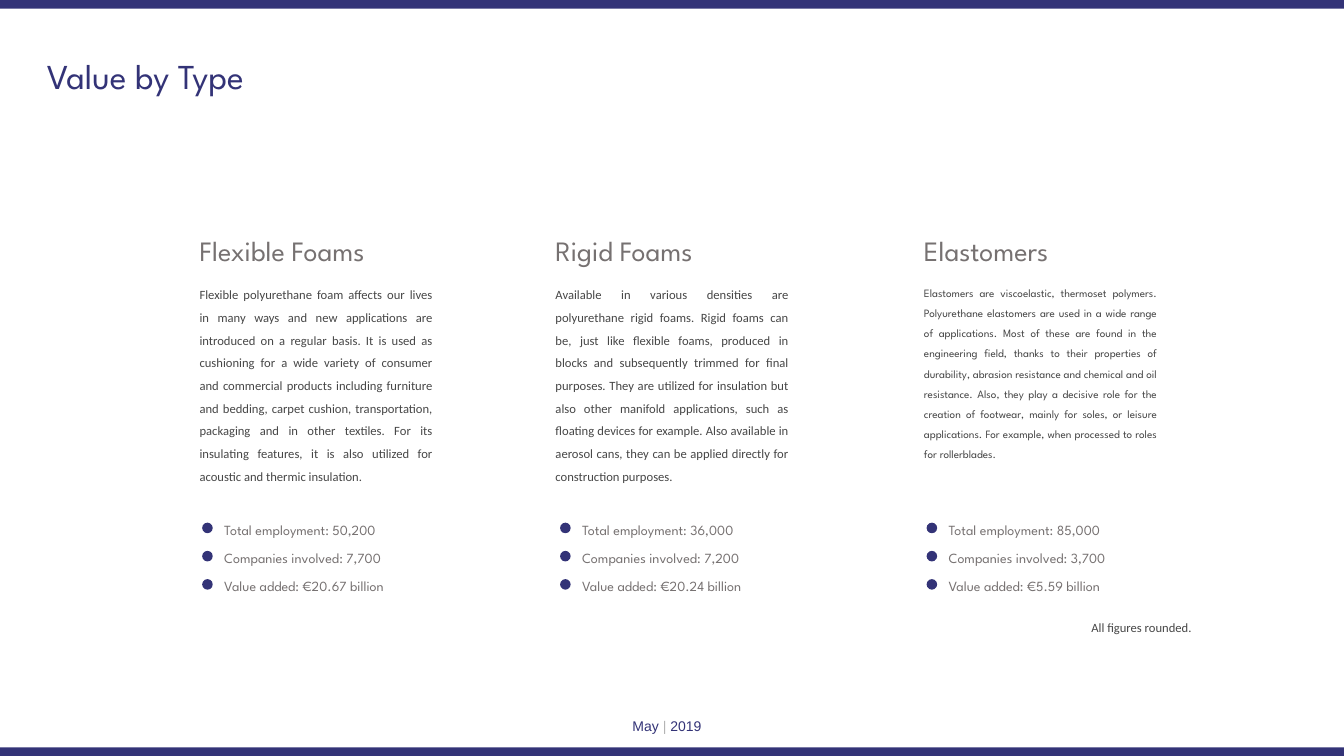
from dataclasses import dataclass

from pptx import Presentation
from pptx.dml.color import RGBColor
from pptx.enum.shapes import MSO_SHAPE as Shape
from pptx.enum.text import MSO_ANCHOR as Anchor, MSO_AUTO_SIZE as Fit, PP_ALIGN as Align
from pptx.util import Inches, Pt

NAVY, GREY, DARK, PALE = "333377", "767171", "464646", "B4B4B4"
SPARTAN = "League Spartan"
WIDE, HIGH, BAR = 26.66, 15, 0.17
DOT, STEP = 0.21, 0.56


@dataclass
class Column:
    left: float
    dots: float
    head: str
    body: str
    jobs: str
    firms: str
    value: str
    font: str = "Calibri"
    size: int = 18


COLUMNS = [
    Column(3.86, 4.01, "Flexible Foams",
           "Flexible polyurethane foam affects our lives in many ways and new "
           "applications are introduced on a regular basis. It is used as cushioning "
           "for a wide variety of consumer and commercial products including furniture "
           "and bedding, carpet cushion, transportation, packaging and in other "
           "textiles. For its insulating features, it is also utilized for acoustic "
           "and thermic insulation.",
           "50,200", "7,700", "20.67"),
    Column(10.92, 11.11, "Rigid Foams",
           "Available in various densities are polyurethane rigid foams. Rigid foams "
           "can be, just like flexible foams, produced in blocks and subsequently "
           "trimmed for final purposes. They are utilized for insulation but also "
           "other manifold applications, such as floating devices for example. Also "
           "available in aerosol cans, they can be applied directly for construction "
           "purposes.",
           "36,000", "7,200", "20.24"),
    Column(18.23, 18.38, "Elastomers",
           "Elastomers are viscoelastic, thermoset polymers. Polyurethane elastomers "
           "are used in a wide range of applications. Most of these are found in the "
           "engineering field, thanks to their properties of durability, abrasion "
           "resistance and chemical and oil resistance. Also, they play a decisive "
           "role for the creation of footwear, mainly for soles, or leisure "
           "applications. For example, when processed to roles for rollerblades.",
           "85,000", "3,700", "5.59", SPARTAN, 16),
]


def paint(fmt, color: str) -> None:
    fmt.rgb = RGBColor.from_string(color)


def place(shape, left: float, top: float, width: float, height: float) -> None:
    shape.left, shape.top = Inches(left), Inches(top)
    shape.width, shape.height = Inches(width), Inches(height)


def write(frame, text: str, *, size: int, color: str, font: str = SPARTAN,
          align=Align.LEFT, lines: float | None = None, wrap: bool = True) -> None:
    """Append a formatted run to the first paragraph of the frame."""
    frame.word_wrap = wrap
    frame.auto_size = Fit.NONE
    frame.vertical_anchor = Anchor.TOP
    para = frame.paragraphs[0]
    para.alignment = align
    if lines:
        para.line_spacing = lines
    run = para.add_run()
    run.text = text
    run.font.size, run.font.name = Pt(size), font
    paint(run.font.color, color)


def add_box(slide, left: float, top: float, width: float, height: float):
    return slide.shapes.add_textbox(
        Inches(left), Inches(top), Inches(width), Inches(height)).text_frame


def add_solid(slide, kind, left: float, top: float, width: float, height: float) -> None:
    shape = slide.shapes.add_shape(
        kind, Inches(left), Inches(top), Inches(width), Inches(height))
    shape.shadow.inherit = False
    shape.fill.solid()
    paint(shape.fill.fore_color, NAVY)
    shape.line.fill.background()


def draw_column(slide, col: Column) -> None:
    write(add_box(slide, col.left, 4.58, 4.82, 0.77), col.head, size=40, color=GREY)
    write(add_box(slide, col.left, 5.5, 4.82, 4.14), col.body, size=col.size,
          color=DARK, font=col.font, align=Align.JUSTIFY, lines=1.5)
    facts = (f"Total employment: {col.jobs}", f"Companies involved: {col.firms}",
             f"Value added: €{col.value} billion")
    for row, fact in enumerate(facts):
        top = 10.29 + row * STEP
        add_solid(slide, Shape.OVAL, col.dots, top + 0.08, DOT, DOT)
        write(add_box(slide, col.dots + 0.34, top, 4.34, 0.44), fact,
              size=20, color=GREY)


def main() -> None:
    deck = Presentation()
    deck.slide_width, deck.slide_height = Inches(WIDE), Inches(HIGH)
    slide = deck.slides.add_slide(deck.slide_layouts[5])

    for top in (0, HIGH - BAR):
        add_solid(slide, Shape.RECTANGLE, 0, top, WIDE, BAR)

    title = slide.shapes.title
    place(title, 0.83, 1.03, 7.09, 0.94)
    write(title.text_frame, "Value by Type", size=50, color=NAVY)

    for col in COLUMNS:
        draw_column(slide, col)

    write(add_box(slide, 21.55, 12.25, 2.21, 0.4), "All figures rounded.",
          size=18, color=DARK, font="Calibri", wrap=False)

    date = add_box(slide, 9.02, 14.19, 8.42, 0.44)
    for text, color in (("May", NAVY), (" | ", PALE), ("2019", NAVY)):
        write(date, text, size=20, color=color, font="Arial", align=Align.CENTER)

    deck.save("out.pptx")


if __name__ == "__main__":
    main()
